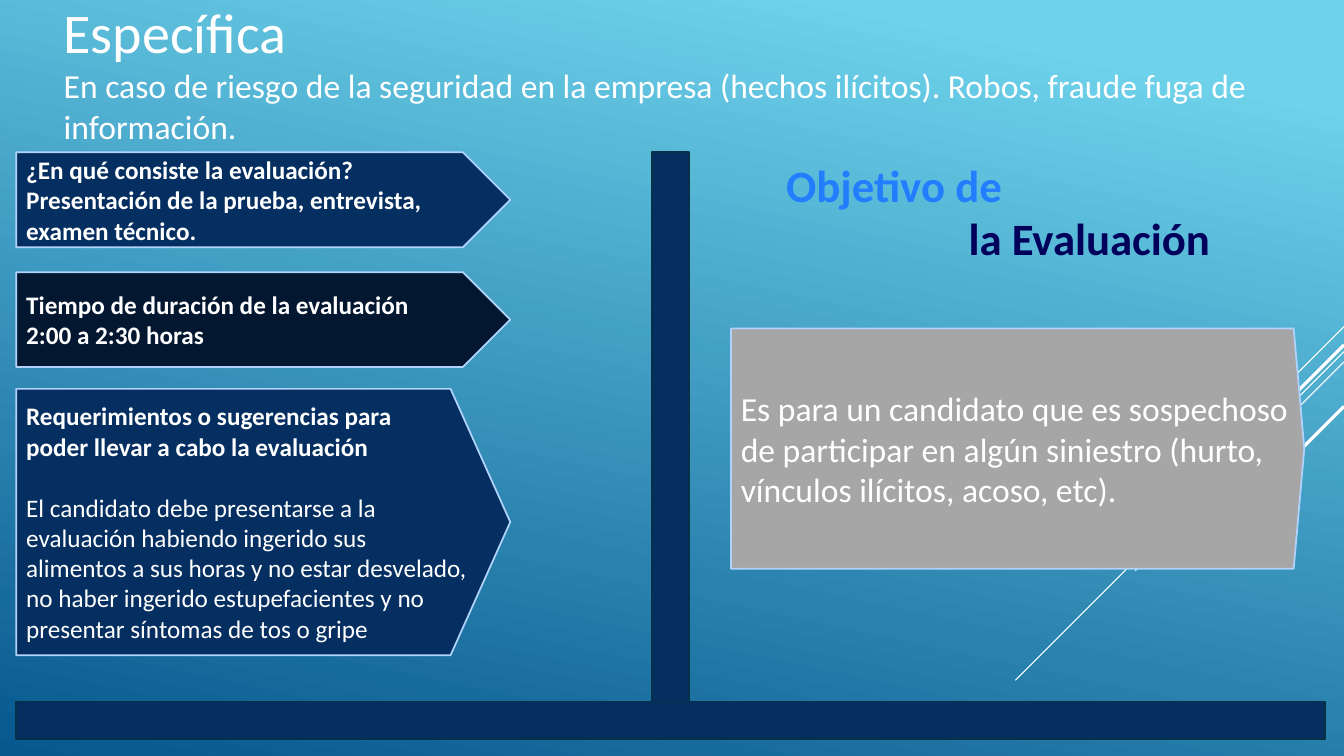
from lxml.etree import SubElement
from pptx import Presentation
from pptx.dml.color import RGBColor
from pptx.enum.shapes import MSO_CONNECTOR, MSO_SHAPE
from pptx.enum.text import MSO_ANCHOR, MSO_AUTO_SIZE, PP_ALIGN
from pptx.oxml.ns import qn
from pptx.util import Cm, Pt

FONT = "Calibri"
WIDTH, HEIGHT = 33.87, 19.05
COLORS = {
    "sky": "6ED2EB", "deep": "06588E", "white": "FFFFFF", "navy": "052F61",
    "midnight": "031730", "edge": "B1D3FB", "bar_edge": "043148",
    "gray": "A6A6A6", "bright": "227EFF", "ink": "00005B",
}

# Paragraph: text, size, bold, color, space before (pt), left indent (cm)
def line(text, size=18, bold=False, color="white", before=0, indent=0):
    return text, size, bold, color, before, indent


TITLE_BOX = (1.35, -0.18, 32, 4.01)
TITLE = [
    line("Específica", 40),
    line("En caso de riesgo de la seguridad en la empresa (hechos ilícitos). "
         "Robos, fraude fuga de información.", 24),
]
HEADING_BOX = (19.56, 3.84, 12.14, 3)
HEADING = [
    line("Objetivo de", 32, True, "bright"),
    line("la Evaluación", 32, True, "ink", indent=4.6),
]
# Box (cm), point depth, fill, paragraphs
ARROWS = [
    ((0.41, 3.84, 12.45, 2.39), 0.5, "navy", [
        line("¿En qué consiste la evaluación?", bold=True),
        line("Presentación de la prueba, entrevista,", bold=True),
        line("examen técnico.", bold=True),
    ]),
    ((0.41, 6.86, 12.45, 2.39), 0.5, "midnight", [
        line("Tiempo de duración de la evaluación", bold=True),
        line("2:00 a 2:30 horas", bold=True),
    ]),
    ((0.41, 9.8, 12.45, 6.71), 0.224, "navy", [
        line("Requerimientos o sugerencias para", bold=True),
        line("poder llevar a cabo la evaluación", bold=True),
        line("El candidato debe presentarse a la", before=22),
        line("evaluación habiendo ingerido sus alimentos a sus horas y no estar "
             "desvelado, no haber ingerido estupefacientes y no presentar "
             "síntomas de tos o gripe"),
    ]),
    ((18.42, 8.28, 14.45, 6.05), 0.044, "gray", [
        line("Es para un candidato que es sospechoso de participar en algún "
             "siniestro (hurto, vínculos ilícitos, acoso, etc).", 24),
    ]),
]
BARS = [(16.43, 3.84, 0.94, 13.87), (0.41, 17.68, 32.99, 0.94)]
# Height at the right edge, horizontal reach (cm), width (pt)
RAYS = [(8.23, 2.54, 0.75), (8.86, 8.28, 0.75), (9.12, 5.26, 0.75),
        (8.69, 4.85, 2.25), (10.24, 3.53, 2.25)]


def rgb(name):
    return RGBColor.from_string(COLORS[name])


def lengths(box):
    return [Cm(value) for value in box]


def write(frame, lines, anchor):
    frame.word_wrap = True
    frame.auto_size = MSO_AUTO_SIZE.NONE
    frame.vertical_anchor = anchor
    for index, (text, size, bold, color, before, indent) in enumerate(lines):
        paragraph = frame.add_paragraph() if index else frame.paragraphs[0]
        paragraph.alignment = PP_ALIGN.LEFT
        paragraph.space_before = Pt(before)
        if indent:
            paragraph._p.get_or_add_pPr().set("marL", str(Cm(indent)))
        run = paragraph.add_run()
        run.text = text
        run.font.name = FONT
        run.font.size = Pt(size)
        run.font.bold = bold
        run.font.color.rgb = rgb(color)


def add_block(slide, kind, box, fill, edge):
    shape = slide.shapes.add_shape(kind, *lengths(box))
    shape.shadow.inherit = False
    shape.fill.solid()
    shape.fill.fore_color.rgb = rgb(fill)
    shape.line.color.rgb = rgb(edge)
    shape.line.width = Pt(1.25)
    return shape


def add_ray(slide, top, reach, width):
    """Draw a 45-degree line down and left from the right edge."""
    ray = slide.shapes.add_connector(
        MSO_CONNECTOR.STRAIGHT,
        *lengths((WIDTH, top, WIDTH - reach, top + reach)))
    ray.line.color.rgb = rgb("white")
    ray.line.width = Pt(width)
    SubElement(ray._element.spPr, qn("a:effectLst"))


def paint_background(slide):
    fill = slide.background.fill
    fill.gradient()
    fill.gradient_angle = 258
    for stop, position, color in zip(fill.gradient_stops, (0.1, 1), ("sky", "deep")):
        stop.position = position
        stop.color.rgb = rgb(color)


def main():
    presentation = Presentation()
    presentation.slide_width, presentation.slide_height = Cm(WIDTH), Cm(HEIGHT)
    slide = presentation.slides.add_slide(presentation.slide_layouts[5])
    paint_background(slide)
    for ray in RAYS:
        add_ray(slide, *ray)

    title = slide.shapes.title
    title.left, title.top, title.width, title.height = lengths(TITLE_BOX)
    write(title.text_frame, TITLE, MSO_ANCHOR.TOP)

    for box in BARS:
        add_block(slide, MSO_SHAPE.RECTANGLE, box, "navy", "bar_edge")
    for box, depth, fill, lines in ARROWS:
        arrow = add_block(slide, MSO_SHAPE.PENTAGON, box, fill, "edge")
        arrow.adjustments[0] = depth
        write(arrow.text_frame, lines, MSO_ANCHOR.MIDDLE)

    heading = slide.shapes.add_textbox(*lengths(HEADING_BOX))
    write(heading.text_frame, HEADING, MSO_ANCHOR.TOP)
    presentation.save("out.pptx")


if __name__ == "__main__":
    main()
